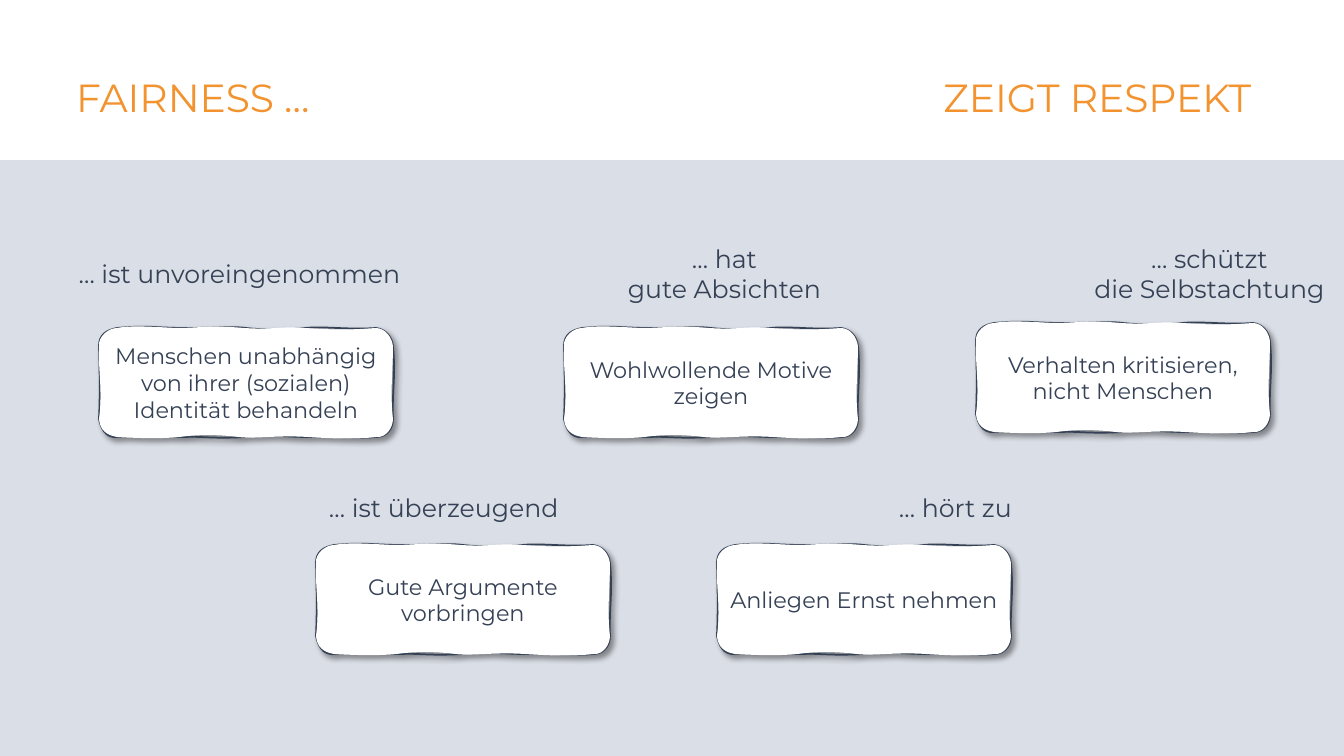
from lxml import etree
from pptx import Presentation
from pptx.dml.color import RGBColor
from pptx.enum.shapes import MSO_SHAPE
from pptx.enum.text import MSO_ANCHOR, MSO_AUTO_SIZE, PP_ALIGN
from pptx.oxml.ns import qn
from pptx.util import Pt

LEFT, CENTER = PP_ALIGN.LEFT, PP_ALIGN.CENTER
MIDDLE, NO_FIT = MSO_ANCHOR.MIDDLE, MSO_AUTO_SIZE.NONE
RECTANGLE = MSO_SHAPE.RECTANGLE

SLIDE_W, SLIDE_H = 1344, 756
EMU_PER_PX = 12192000 / SLIDE_W
FONT = "Montserrat"
COLORS = {"background": "DADEE6", "band": "FFFFFF", "card": "FFFFFF",
          "text": "354155", "title": "F2932F", "shadow": "000000"}
NO_STYLE = "{2D5ABB26-0587-4C30-8999-92F81FD0307C}"

TABLE_COLS, TABLE_ROW = (433, 217, 217, 433), 117
MERGES = [((0, 1), (0, 2)), ((1, 1), (1, 2)),
          ((2, 0), (2, 1)), ((2, 2), (2, 3)),
          ((3, 0), (3, 1)), ((3, 2), (3, 3))]
# row, column, text, alignment, left margin
HEADINGS = [
    (0, 0, "… ist unvoreingenommen", CENTER, 10),
    (0, 1, "… hat\vgute Absichten", CENTER, 10),
    (0, 3, "… schützt\vdie Selbstachtung", CENTER, 10),
    (2, 0, "… ist überzeugend", LEFT, 306),
    (2, 2, "… hört zu", LEFT, 123),
]
CARD_W, CARD_H = 294, 109
CARDS = [
    (99, 328, "Menschen unabhängig von ihrer (sozialen) Identität behandeln"),
    (564, 328, "Wohlwollende Motive zeigen"),
    (976, 323, "Verhalten kritisieren, nicht Menschen"),
    (316, 545, "Gute Argumente vorbringen"),
    (717, 545, "Anliegen Ernst nehmen"),
]
# Hand-drawn outlines: cubic curves on a 292 x 108 grid, starting at START
GRID_W, GRID_H = 292, 108
START = (0, 18)
INK_CURVES = [
    (0, 7, 7, 2, 18, 0), (50, -3, 54, 0, 87, 0), (121, 0, 130, -2, 146, 0),
    (163, 2, 188, 2, 205, 0), (223, -2, 249, 2, 275, 0),
    (284, 1, 291, 8, 292, 18), (295, 48, 291, 61, 292, 90),
    (292, 100, 286, 108, 275, 108), (254, 110, 231, 107, 208, 108),
    (185, 108, 172, 105, 144, 108), (115, 110, 99, 107, 85, 108),
    (71, 108, 37, 106, 18, 108), (6, 109, 2, 99, 0, 90),
    (1, 71, 1, 49, 0, 18),
]
PAPER_CURVES = [
    (-1, 9, 9, 0, 18, 0), (32, -3, 56, -1, 77, 0), (98, 0, 112, -3, 144, 0),
    (176, 2, 175, -2, 205, 0), (235, 2, 248, 2, 275, 0),
    (284, 0, 291, 9, 292, 18), (292, 43, 289, 64, 292, 90),
    (292, 98, 286, 109, 275, 108), (260, 110, 238, 110, 208, 108),
    (178, 106, 154, 110, 139, 108), (123, 106, 101, 105, 80, 108),
    (59, 110, 37, 109, 18, 108), (7, 106, 1, 101, 0, 90),
    (4, 63, -1, 42, 0, 18),
]


def px(n):
    return round(n * EMU_PER_PX)


def rgb(name):
    return RGBColor.from_string(COLORS[name])


def sub(parent, tag, **attrs):
    return etree.SubElement(parent, qn(tag), {k: str(v) for k, v in attrs.items()})


def write(tf, text, size, color, align):
    tf.text = text
    p = tf.paragraphs[0]
    p.alignment = align
    for r in p.runs:
        r.font.name, r.font.size = FONT, Pt(size)
        r.font.color.rgb = rgb(color)
    return p


def paint(shape, fill, line, width):
    shape.fill.solid()
    shape.fill.fore_color.rgb = rgb(fill)
    shape.line.color.rgb = rgb(line)
    shape.line.width = Pt(width)
    shape.shadow.inherit = False


def add_header(s, x, y, w, h):
    band = s.shapes.add_shape(RECTANGLE, px(x), px(y), px(w), px(h))
    paint(band, "band", "band", 1)
    title = s.shapes.title
    band._element.addnext(title._element)
    title.left, title.top = px(x + 66), px(y + 74)
    title.width, title.height = px(w - 95), px(51)
    tf = title.text_frame
    tf.auto_size, tf.vertical_anchor = NO_FIT, MIDDLE
    p = write(tf, "FAIRNESS …\tZEIGT RESPEKT", 28, "title", LEFT)
    p.line_spacing = 0.9
    tabs = sub(p._p.get_or_add_pPr(), "a:tabLst")
    sub(tabs, "a:tab", pos=px(1175), algn="r")


def add_headings(s, x, y):
    rows = 4
    frame = s.shapes.add_table(rows, len(TABLE_COLS), px(x), px(y),
                               px(sum(TABLE_COLS)), px(rows * TABLE_ROW))
    table = frame.table
    table.first_row = table.horz_banding = False
    table._tbl.tblPr.find(qn("a:tableStyleId")).text = NO_STYLE
    for col, width in zip(table.columns, TABLE_COLS):
        col.width = px(width)
    for row in table.rows:
        row.height = px(TABLE_ROW)
    for cell in table.iter_cells():
        cell.fill.background()
    for first, last in MERGES:
        table.cell(*first).merge(table.cell(*last))
    for row, col, text, align, margin in HEADINGS:
        cell = table.cell(row, col)
        cell.vertical_anchor, cell.margin_left = MIDDLE, px(margin)
        write(cell.text_frame, text, 18, "text", align)


def add_curves(path_list, curves, **attrs):
    outline = sub(path_list, "a:path", w=GRID_W, h=GRID_H, **attrs)
    sub(sub(outline, "a:moveTo"), "a:pt", x=START[0], y=START[1])
    for curve in curves:
        bezier = sub(outline, "a:cubicBezTo")
        for x, y in zip(curve[::2], curve[1::2]):
            sub(bezier, "a:pt", x=x, y=y)
    sub(outline, "a:close")


def add_card(s, x, y, w, h, text):
    """Wavy white card: an ink outline partly covered by its paper."""
    builder = s.shapes.build_freeform(0, 0, scale=EMU_PER_PX)
    builder.add_line_segments([(w, 0), (w, h), (0, h)])
    card = builder.convert_to_shape(px(x), px(y))
    paint(card, "card", "text", 1.25)
    spPr = card._element.spPr
    path_list = spPr.find(qn("a:custGeom")).find(qn("a:pathLst"))
    path_list.clear()
    add_curves(path_list, INK_CURVES, fill="none")
    add_curves(path_list, PAPER_CURVES, stroke=0)
    shadow = sub(spPr.find(qn("a:effectLst")), "a:outerShdw", blurRad=Pt(4),
                 dist=Pt(3), dir=45 * 60000, algn="tl", rotWithShape=0)
    sub(sub(shadow, "a:srgbClr", val=COLORS["shadow"]), "a:alpha", val=40000)
    tf = card.text_frame
    tf.word_wrap, tf.vertical_anchor = True, MIDDLE
    write(tf, text, 16, "text", CENTER)


def main():
    prs = Presentation()
    prs.slide_width, prs.slide_height = px(SLIDE_W), px(SLIDE_H)
    s = prs.slides.add_slide(prs.slide_layouts[5])
    s.background.fill.solid()
    s.background.fill.fore_color.rgb = rgb("background")
    add_header(s, 0, 0, SLIDE_W, 159)
    add_headings(s, 23, 216)
    for x, y, text in CARDS:
        add_card(s, x, y, CARD_W, CARD_H, text)
    prs.save("out.pptx")


if __name__ == "__main__":
    main()
